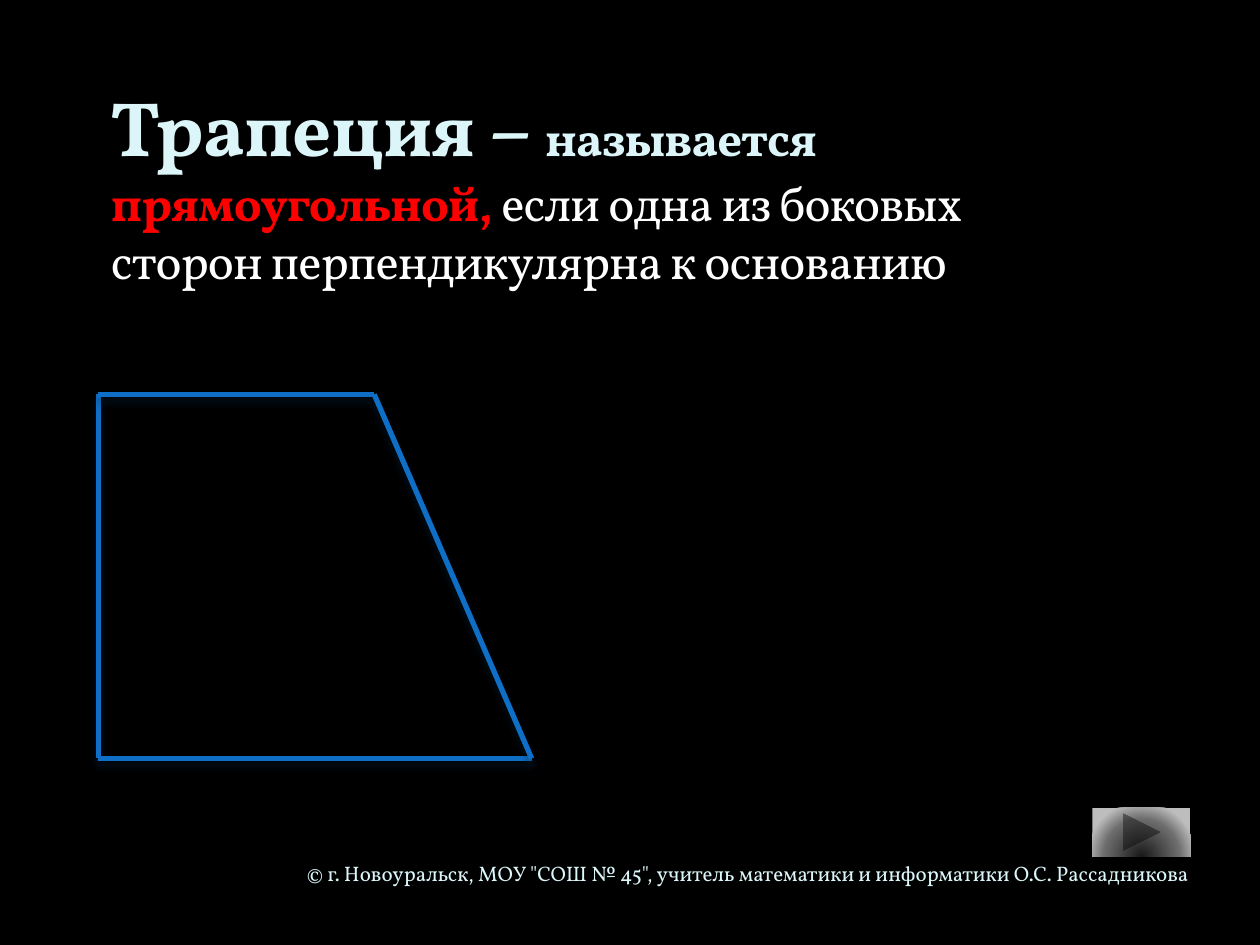
from lxml import etree
from pptx import Presentation
from pptx.dml.color import RGBColor as Rgb
from pptx.enum.shapes import MSO_CONNECTOR as Connector, MSO_SHAPE as Shape
from pptx.enum.text import MSO_ANCHOR as Anchor, MSO_AUTO_SIZE as AutoSize, PP_ALIGN as Align
from pptx.oxml import parse_xml
from pptx.oxml.ns import nsdecls, qn
from pptx.util import Inches, Pt

COLORS = {
    "background": "000000",
    "pale": "DBF5F9",
    "accent": "FF0000",
    "text": "FFFFFF",
    "edge": "0F6FC6",
    "edge_shadow": "042747",
    "button_shadow": "000000",
}
BUTTON_STOPS = [(0, "191919"), (68, "6C6C6C"), (100, "BDBDBD")]


class SlideBuilder:
    font = "Vollkorn"

    def __init__(self, page):
        self.page = page
        fill = page.background.fill
        fill.solid()
        fill.fore_color.rgb = self.color("background")

    def color(self, name):
        return Rgb.from_string(COLORS[name])

    def place(self, box, area):
        for name, value in zip(("left", "top", "width", "height"), area):
            setattr(box, name, Inches(value))

    def fill_text(self, box, spans, frame_format, align, spacing=0):
        frame = box.text_frame
        for name, value in frame_format.items():
            setattr(frame, name, value)
        para = frame.paragraphs[0]
        para.alignment = align
        for text, size, color, bold in spans:
            span = para.add_run()
            span.text = text
            for name, value in {"name": self.font, "size": Pt(size), "bold": bold}.items():
                setattr(span.font, name, value)
            span.font.color.rgb = self.color(color)
            if spacing:
                span.font._element.set("spc", str(int(spacing * 100)))

    def title(self, area, spans):
        box = self.page.shapes.title
        self.place(box, area)
        frame_format = {
            "word_wrap": True, "auto_size": AutoSize.NONE, "vertical_anchor": Anchor.BOTTOM,
            "margin_left": Inches(0.1), "margin_top": Inches(0.1),
            "margin_right": Inches(0.1), "margin_bottom": Inches(0.05),
        }
        self.fill_text(box, spans, frame_format, Align.LEFT, spacing=-0.5)

    def footer(self, area, text):
        box = self.page.shapes.add_textbox(*map(Inches, area))
        frame_format = {"word_wrap": True, "vertical_anchor": Anchor.MIDDLE}
        self.fill_text(box, [(text, 12, "pale", False)], frame_format, Align.RIGHT)

    def shadow(self, properties, color):
        effects = properties.find(qn("a:effectLst"))
        if effects is None:
            effects = etree.SubElement(properties, qn("a:effectLst"))
        effects.append(parse_xml(
            f'<a:outerShdw {nsdecls("a")} blurRad="{Pt(4.5)}" dist="{Pt(3)}" dir="5400000" '
            f'rotWithShape="0"><a:srgbClr val="{COLORS[color]}"><a:alpha val="48000"/>'
            '</a:srgbClr></a:outerShdw>'))

    def outline(self, edges):
        group = self.page.shapes.add_group_shape()
        for start, end in edges:
            edge = group.shapes.add_connector(Connector.STRAIGHT, *map(Inches, start + end))
            edge.line.width = Pt(3)
            edge.line.color.rgb = self.color("edge")
            self.shadow(edge._element.spPr, "edge_shadow")

    def next_button(self, area):
        button = self.page.shapes.add_shape(
            Shape.ACTION_BUTTON_FORWARD_OR_NEXT, *map(Inches, area))
        button.line.fill.background()
        button.shadow.inherit = False
        properties = button._element.spPr
        stops = "".join(
            f'<a:gs pos="{position * 1000}"><a:srgbClr val="{color}"/></a:gs>'
            for position, color in BUTTON_STOPS)
        properties.find(qn("a:prstGeom")).addnext(parse_xml(
            f'<a:gradFill {nsdecls("a")} rotWithShape="1"><a:gsLst>{stops}</a:gsLst>'
            '<a:path path="circle"><a:fillToRect l="50000" t="130000" r="50000" b="-30000"/>'
            '</a:path></a:gradFill>'))
        self.shadow(properties, "button_shadow")


def main():
    deck = Presentation()
    deck.slide_width, deck.slide_height = Inches(10), Inches(7.5)
    builder = SlideBuilder(deck.slides.add_slide(deck.slide_layouts[5]))

    builder.title((0.78, 0.55, 7.89, 1.8), [
        ("Трапеция – ", 44, "pale", True),
        ("называется ", 28, "pale", True),
        ("прямоугольной, ", 28, "accent", True),
        ("если одна из боковых сторон перпендикулярна к основанию", 28, "text", False),
    ])
    builder.footer(
        (2.11, 6.72, 7.43, 0.42),
        '© г. Новоуральск, МОУ "СОШ № 45", учитель математики и информатики О.С. Рассадникова')

    top_left, top_right = (0.78, 3.13), (2.97, 3.13)
    bottom_left, bottom_right = (0.78, 6.02), (4.22, 6.02)
    builder.outline([
        (top_left, bottom_left),
        (bottom_left, bottom_right),
        (top_left, top_right),
        (top_right, bottom_right),
    ])
    builder.next_button((8.67, 6.41, 0.78, 0.39))
    deck.save("out.pptx")


if __name__ == "__main__":
    main()
